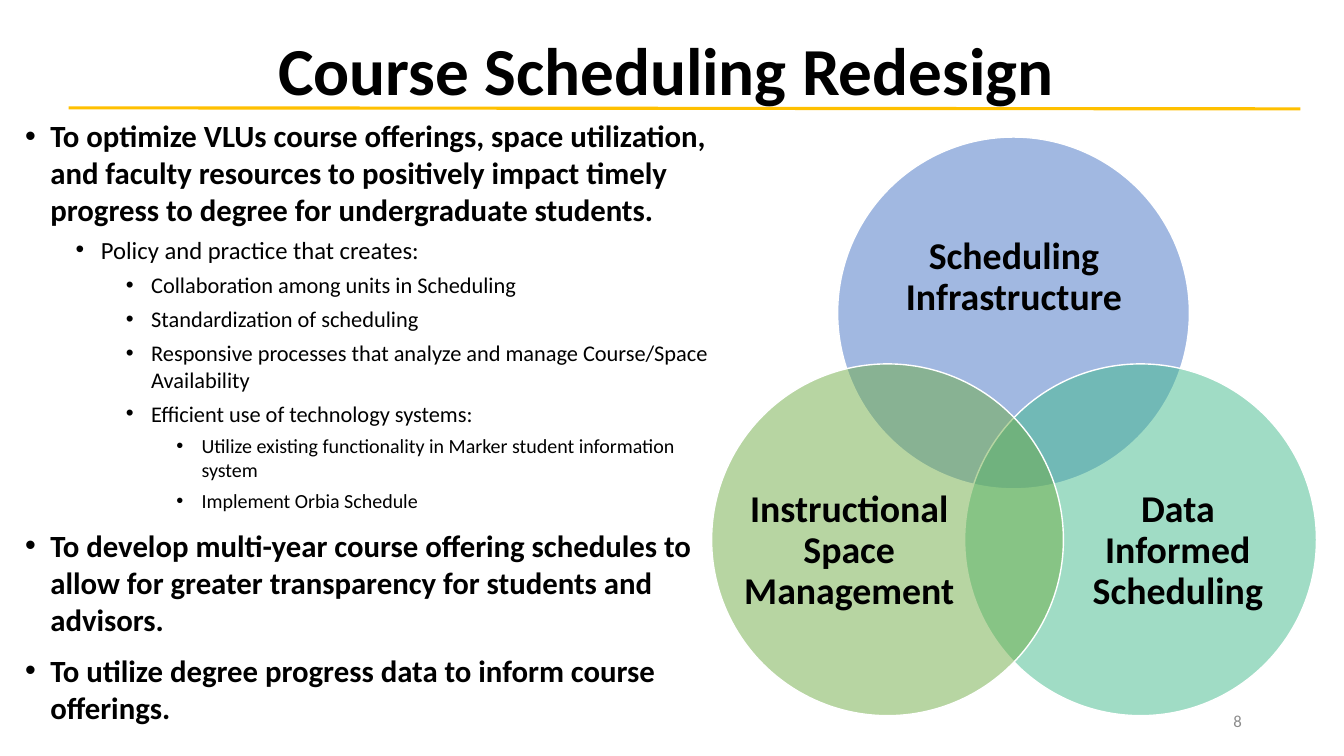
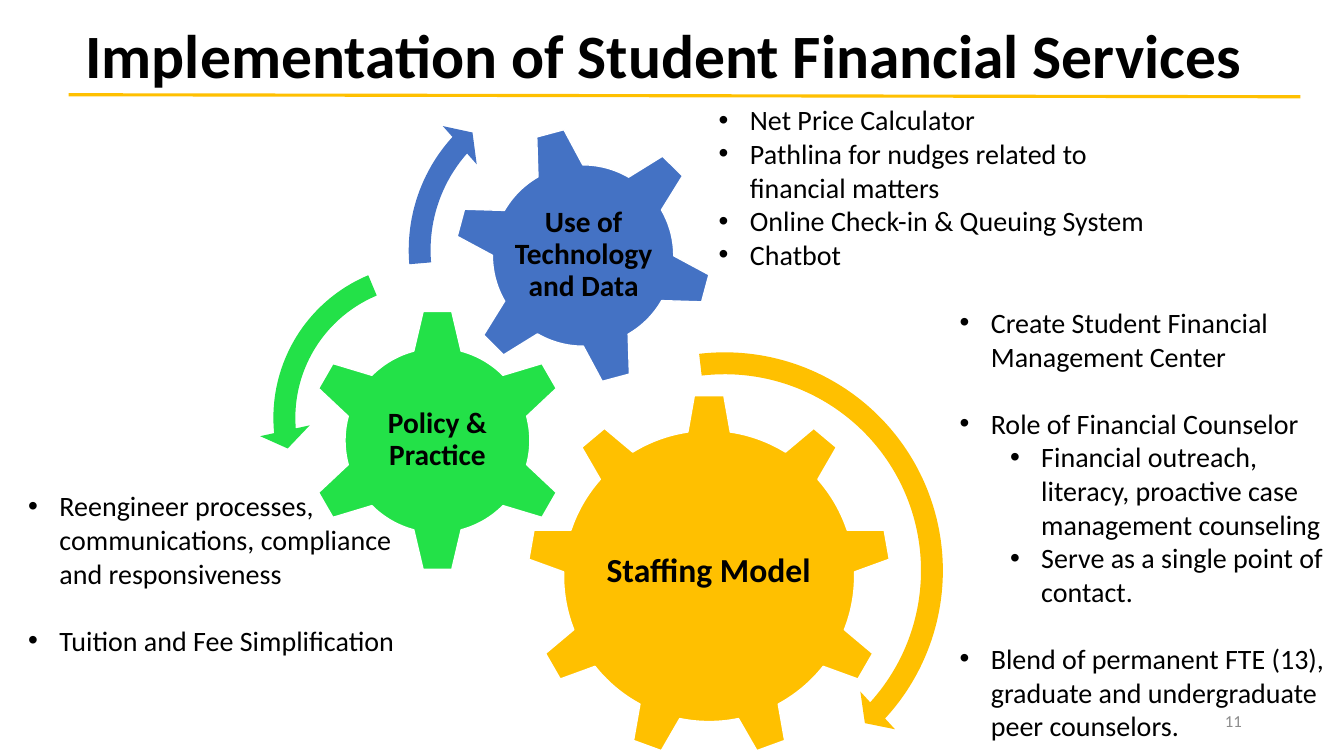
from dataclasses import dataclass
from typing import NamedTuple

from lxml.etree import SubElement
from pptx import Presentation
from pptx.dml.color import RGBColor
from pptx.enum.shapes import MSO_CONNECTOR, MSO_SHAPE
from pptx.enum.text import MSO_ANCHOR, MSO_AUTO_SIZE, PP_ALIGN
from pptx.oxml.ns import qn
from pptx.util import Inches, Pt


@dataclass(frozen=True)
class Theme:
    font: str = "Calibri"
    text: str = "000000"
    muted: str = "8C8C8C"
    white: str = "FFFFFF"
    gold: str = "FFC000"
    blue: str = "4472C4"
    teal: str = "43BB8D"
    olive: str = "70AD47"
    green: str = "23E148"
    title_size: float = 48
    long_title_size: float = 44
    number_size: float = 12
    list_size: float = 20
    gear_size: float = 21
    hub_size: float = 24
    venn_size: float = 27
    outline_sizes: tuple[float, ...] = (22, 17.6, 16, 14.3)


T = Theme()


class Box(NamedTuple):
    x: float
    y: float
    w: float
    h: float


class Item(NamedTuple):
    text: str
    level: int = 0
    before: float = 0


class Bullets(NamedTuple):
    box: Box
    items: list[Item]
    sizes: tuple[float, ...]
    hang: float
    bold_top: bool = False


class Part(NamedTuple):
    kind: MSO_SHAPE
    box: Box
    color: str
    label: str
    label_box: Box
    size: float
    rotation: float = 0


class Arrow(NamedTuple):
    kind: MSO_SHAPE
    box: Box
    color: str
    adjustments: tuple[float, ...]


def emu(box: Box) -> list[int]:
    return [Inches(v) for v in box]


def place(sp, box: Box) -> None:
    sp.left, sp.top, sp.width, sp.height = emu(box)


def write(p, text: str, *, size: float, bold: bool = False, color: str = T.text,
          align=PP_ALIGN.LEFT, spacing: float = 1.0, before: float = 0) -> None:
    p.alignment, p.line_spacing = align, spacing
    p.space_before, p.space_after = Pt(before), Pt(0)
    r = p.add_run()
    r.text = text
    r.font.name, r.font.size, r.font.bold = T.font, Pt(size), bold
    r.font.color.rgb = RGBColor.from_string(color)


def frame(sp, anchor=MSO_ANCHOR.MIDDLE, inset: float | None = None):
    tf = sp.text_frame
    tf.word_wrap, tf.auto_size, tf.vertical_anchor = True, MSO_AUTO_SIZE.NONE, anchor
    if inset is not None:
        tf.margin_left = tf.margin_right = tf.margin_top = tf.margin_bottom = Inches(inset)
    return tf


def add_text(s, box: Box, text: str, *, inset: float | None = None, **fmt) -> None:
    tf = frame(s.shapes.add_textbox(*emu(box)), inset=inset)
    write(tf.paragraphs[0], text, **fmt)


def fill_list(sp, b: Bullets) -> None:
    place(sp, b.box)
    tf = frame(sp, MSO_ANCHOR.TOP)
    for i, item in enumerate(b.items):
        p = tf.add_paragraph() if i else tf.paragraphs[0]
        p.level = item.level
        write(p, item.text, size=b.sizes[item.level], before=item.before,
              bold=b.bold_top and item.level == 0)
        pPr = p._p.get_or_add_pPr()
        pPr.set("marL", str(Inches(b.hang + 0.5 * item.level)))
        pPr.set("indent", str(-Inches(b.hang)))
        SubElement(pPr, qn("a:buFont")).set("typeface", "Arial")
        SubElement(pPr, qn("a:buChar")).set("char", "•")


def add_rule(s, y1: float, y2: float) -> None:
    ln = s.shapes.add_connector(MSO_CONNECTOR.STRAIGHT, Inches(0.68), Inches(y1),
                                Inches(12.9), Inches(y2))
    ln.line.color.rgb = RGBColor.from_string(T.gold)
    ln.line.width = Pt(2.25)
    SubElement(ln._element.spPr, qn("a:effectLst"))


def add_solid(s, kind: MSO_SHAPE, box: Box, color: str, alpha: int = 100):
    sp = s.shapes.add_shape(kind, *emu(box))
    sp.shadow.inherit = False
    sp.fill.solid()
    sp.fill.fore_color.rgb = RGBColor.from_string(color)
    if alpha < 100:
        clr = sp._element.spPr.find(qn("a:solidFill")).find(qn("a:srgbClr"))
        SubElement(clr, qn("a:alpha")).set("val", str(alpha * 1000))
    return sp


def add_part(s, part: Part, alpha: int = 100, inset: float = 0) -> None:
    sp = add_solid(s, part.kind, part.box, part.color, alpha)
    sp.line.color.rgb = RGBColor.from_string(T.white)
    sp.line.width = Pt(1)
    sp.rotation = part.rotation
    add_text(s, part.label_box, part.label, inset=inset, size=part.size, bold=True,
             align=PP_ALIGN.CENTER, spacing=0.9)


def add_arrow(s, arrow: Arrow) -> None:
    sp = add_solid(s, arrow.kind, arrow.box, arrow.color)
    sp.line.fill.background()
    for i, value in enumerate(arrow.adjustments):
        sp.adjustments[i] = value


def add_slide(prs, layout: int, title: str, title_box: Box, title_size: float,
              number: str, rule: tuple[float, float], lists: list[Bullets]):
    s = prs.slides.add_slide(prs.slide_layouts[layout])
    place(s.shapes.title, title_box)
    write(frame(s.shapes.title).paragraphs[0], title, size=title_size, bold=True,
          align=PP_ALIGN.CENTER, spacing=0.9)
    bodies = [sp for sp in s.placeholders if sp.placeholder_format.idx]
    for sp, b in zip(bodies, lists):
        fill_list(sp, b)
    for sp in bodies[len(lists):]:
        sp.element.getparent().remove(sp.element)
    add_text(s, Box(9.42, 6.95, 3, 0.4), number, size=T.number_size, color=T.muted,
             align=PP_ALIGN.RIGHT)
    add_rule(s, *rule)
    return s


def build_scheduling(prs) -> None:
    goals = Bullets(Box(0.15, 1.11, 7.02, 6.68), [
        Item("To optimize VLUs course offerings, space utilization, and faculty resources "
             "to positively impact timely progress to degree for undergraduate students.", 0, 10),
        Item("Policy and practice that creates:", 1, 5),
        Item("Collaboration among units in Scheduling", 2, 5),
        Item("Standardization of scheduling", 2, 5),
        Item("Responsive processes that analyze and manage Course/Space Availability", 2, 5),
        Item("Efficient use of technology systems:", 2, 5),
        Item("Utilize existing functionality in Marker student information system", 3, 5),
        Item("Implement Orbia Schedule", 3, 5),
        Item("To develop multi-year course offering schedules to allow for greater "
             "transparency for students and advisors.", 0, 10),
        Item("To utilize degree progress data to inform course offerings.", 0, 10),
    ], T.outline_sizes, hang=0.25, bold_top=True)
    s = add_slide(prs, 1, "Course Scheduling Redesign", Box(0.3, 0.1, 12.62, 1.26),
                  T.title_size, "8", (1.07, 1.08), [goals])
    d = 3.49
    for x, y, color, label, label_box in (
        (8.31, 1.36, T.blue, "Scheduling Infrastructure", Box(8.78, 1.97, 2.56, 1.57)),
        (9.57, 3.61, T.teal, "Data Informed Scheduling", Box(10.64, 4.51, 2.09, 1.92)),
        (7.06, 3.61, T.olive, "Instructional Space Management", Box(7.38, 4.51, 2.09, 1.92)),
    ):
        add_part(s, Part(MSO_SHAPE.OVAL, Box(x, y, d, d), color, label, label_box,
                         T.venn_size), alpha=50)


def build_services(prs) -> None:
    sizes, hang, gap = (T.list_size,) * 2, 0.31, 24
    staffing = Bullets(Box(9.42, 2.98, 3.89, 4.48), [
        Item("Create Student Financial Management Center"),
        Item("Role of Financial Counselor", 0, gap),
        Item("Financial outreach, literacy, proactive case management counseling", 1),
        Item("Serve as a single point of contact.", 1),
        Item("Blend of permanent FTE (13), graduate and undergraduate peer counselors.", 0, gap),
    ], sizes, hang)
    policy = Bullets(Box(0.18, 4.8, 4.03, 2.12), [
        Item("Reengineer processes, communications, compliance and responsiveness"),
        Item("Tuition and Fee Simplification", 0, gap),
    ], sizes, hang)
    technology = Bullets(Box(7.03, 0.97, 4.77, 2.12), [
        Item("Net Price Calculator"),
        Item("Pathlina for nudges related to financial matters"),
        Item("Online Check-in & Queuing System"),
        Item("Chatbot"),
    ], sizes, hang)
    s = add_slide(prs, 4, "Implementation of Student Financial Services",
                  Box(0.28, 0.07, 12.62, 1.02), T.long_title_size, "11", (0.94, 0.96),
                  [staffing, policy, technology])
    gears = [
        Part(MSO_SHAPE.GEAR_9, Box(5.23, 3.91, 3.61, 3.61), T.gold, "Staffing Model",
             Box(5.95, 4.75, 2.16, 1.85), T.hub_size),
        Part(MSO_SHAPE.GEAR_6, Box(3.03, 3.06, 2.62, 2.62), T.green, "Policy & Practice",
             Box(3.69, 3.72, 1.3, 1.29), T.gear_size),
        Part(MSO_SHAPE.GEAR_6, Box(4.5, 1.25, 2.57, 2.57), T.blue,
             "Use of Technology and Data", Box(5.07, 1.81, 1.44, 1.44), T.gear_size, 345),
    ]
    arrows = [
        Arrow(MSO_SHAPE.CIRCULAR_ARROW, Box(4.88, 3.35, 4.62, 4.62), T.gold,
              (0.047, 2.99, 25.47, 157.96, 0.055)),
        Arrow(MSO_SHAPE.LEFT_CIRCULAR_ARROW, Box(2.57, 2.47, 3.35, 3.35), T.green,
              (0.065, 4.3, 104.89, 148.38, 0.075)),
        Arrow(MSO_SHAPE.CIRCULAR_ARROW, Box(3.91, 0.67, 3.62, 3.62), T.blue,
              (0.06, 3.94, 133.14, 105.08, 0.07)),
    ]
    for gear in gears:
        add_part(s, gear, inset=0.03)
    for arrow in arrows:
        add_arrow(s, arrow)


def main() -> None:
    prs = Presentation()
    prs.slide_width, prs.slide_height = Inches(40 / 3), Inches(7.5)
    build_scheduling(prs)
    build_services(prs)
    prs.save("out.pptx")


if __name__ == "__main__":
    main()
